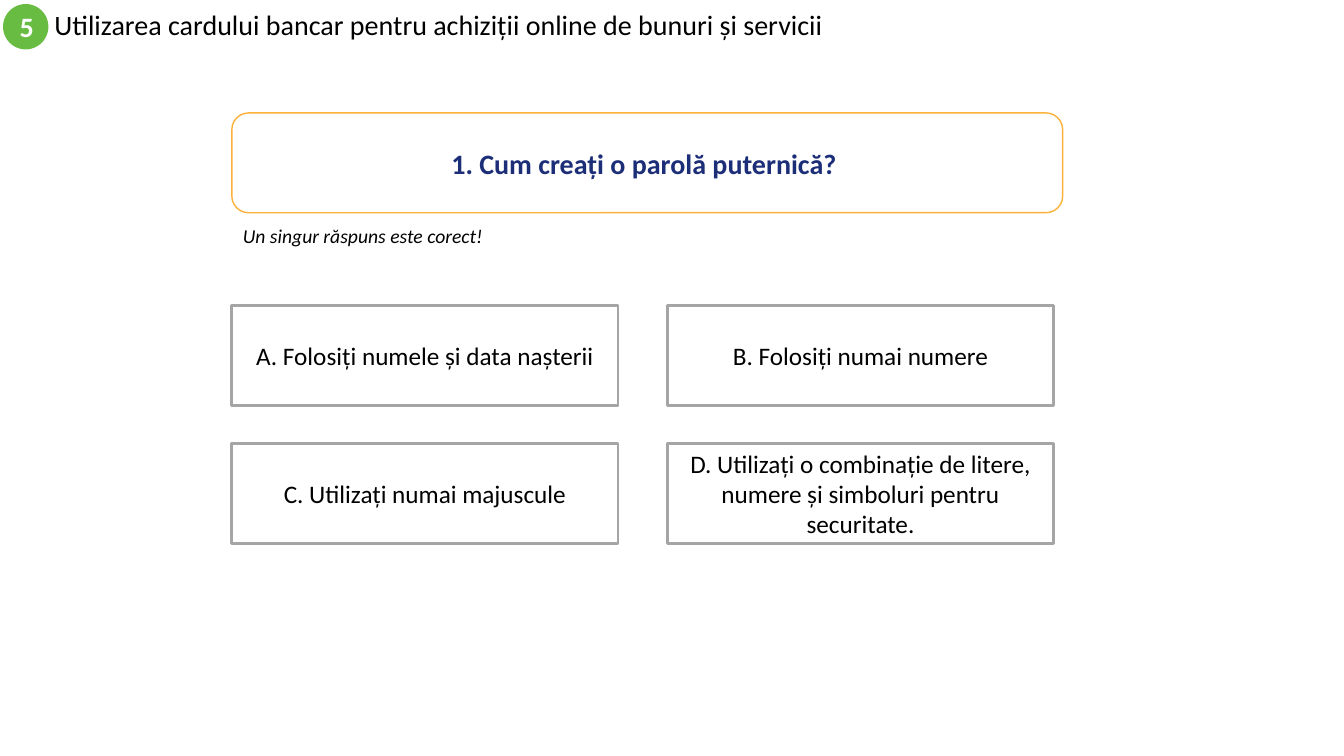
from dataclasses import dataclass

from pptx import Presentation
from pptx.dml.color import RGBColor
from pptx.enum.shapes import MSO_SHAPE
from pptx.enum.text import MSO_ANCHOR, PP_ALIGN
from pptx.util import Inches, Pt

TITLE = "Utilizarea cardului bancar pentru achiziții online de bunuri și servicii"
SECTION = "5"
QUESTION = "1. Cum creați o parolă puternică? "
HINT = "Un singur răspuns este corect!"
ANSWERS = [
    "A. Folosiți numele și data nașterii",
    "B. Folosiți numai numere",
    "C. Utilizați numai majuscule",
    "D. Utilizați o combinație de litere, numere și simboluri pentru securitate.",
]


@dataclass(frozen=True)
class Theme:
    """Colours, font and type sizes of the slide."""
    font: str = "Calibri"
    black: str = "000000"
    white: str = "FFFFFF"
    green: str = "68BC42"
    orange: str = "FCB13A"
    navy: str = "1C2E78"
    grey: str = "A5A5A5"
    head: int = 20
    body: int = 18
    note: int = 14


T = Theme()
LEFT, ANSWER_TOP = 2.3, 3.03
ANSWER_W, BOX_H = 3.83, 0.99
STEP_X, STEP_Y = 4.32, 1.37
COLS = 2


def write(sp, text, size=T.body, color=T.black, bold=False, italic=False,
          align=PP_ALIGN.CENTER, anchor=MSO_ANCHOR.MIDDLE, spacing=None):
    """Put one formatted paragraph into a shape."""
    tf = sp.text_frame
    tf.word_wrap = True
    tf.vertical_anchor = anchor
    tf.margin_left = tf.margin_right = Inches(0.1)
    tf.margin_top = tf.margin_bottom = Inches(0.05)
    p = tf.paragraphs[0]
    p.alignment = align
    p.line_spacing = spacing
    r = p.add_run()
    r.text = text
    r.font.name = T.font
    r.font.size = Pt(size)
    r.font.bold = bold
    r.font.italic = italic
    r.font.color.rgb = RGBColor.from_string(color)


def add_box(s, kind, box, fill=T.white, line=None, width=1):
    """Add a flat preset shape with an optional outline."""
    sp = s.shapes.add_shape(kind, *map(Inches, box))
    sp.shadow.inherit = False
    sp.fill.solid()
    sp.fill.fore_color.rgb = RGBColor.from_string(fill)
    if line:
        sp.line.color.rgb = RGBColor.from_string(line)
        sp.line.width = Pt(width)
    else:
        sp.line.fill.background()
    return sp


def main():
    """Build the quiz slide and save it."""
    prs = Presentation()
    prs.slide_width, prs.slide_height = Inches(13.33), Inches(7.5)
    s = prs.slides.add_slide(prs.slide_layouts[5])

    title = s.shapes.title
    title.left, title.top = Inches(0.44), Inches(0.04)
    title.width, title.height = Inches(8), Inches(0.45)
    write(title, TITLE, size=T.head, align=PP_ALIGN.LEFT, spacing=0.9)

    badge = add_box(s, MSO_SHAPE.OVAL, (0.03, 0.04, 0.45, 0.45), fill=T.green)
    write(badge, SECTION, size=T.head, color=T.white, bold=True)

    question = add_box(s, MSO_SHAPE.ROUNDED_RECTANGLE,
                       (LEFT, 1.12, 8.24, BOX_H), line=T.orange)
    write(question, QUESTION, size=T.head, color=T.navy, bold=True)

    hint = s.shapes.add_textbox(*map(Inches, (2.31, 2.17, 2.59, 0.34)))
    write(hint, HINT, size=T.note, italic=True,
          align=PP_ALIGN.LEFT, anchor=MSO_ANCHOR.TOP)

    for i, text in enumerate(ANSWERS):
        row, col = divmod(i, COLS)
        box = (LEFT + col * STEP_X, ANSWER_TOP + row * STEP_Y, ANSWER_W, BOX_H)
        answer = add_box(s, MSO_SHAPE.RECTANGLE, box, line=T.grey, width=2)
        write(answer, text)

    prs.save("out.pptx")


if __name__ == "__main__":
    main()
